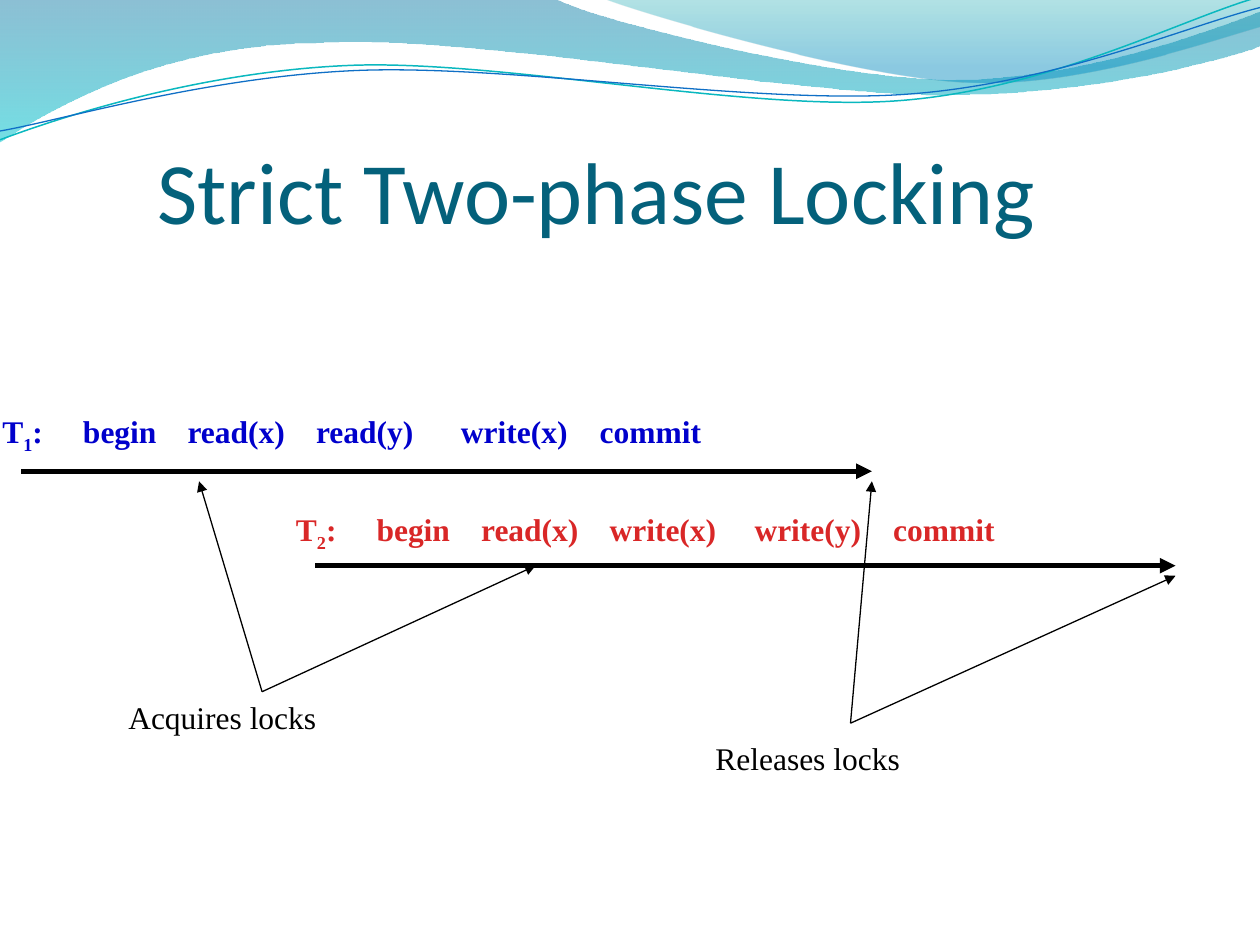
from dataclasses import dataclass

from lxml import etree
from pptx import Presentation
from pptx.dml.color import RGBColor
from pptx.enum import shapes, text
from pptx.oxml.ns import qn
from pptx.util import Inches, Pt


@dataclass(frozen=True)
class Theme:
    title_font: str = "Calibri"
    body_font: str = "Times New Roman"
    title_size: float = 50
    body_size: float = 18
    title: str = "04617B"
    first: str = "0000CC"
    second: str = "D92727"
    ink: str = "000000"
    axis_width: float = 3
    pointer_width: float = 0.75


THEME = Theme()
STEP_STOPS = (0.64, 1.47, 2.49, 3.64, 4.74)

BANDS = (
    ((0, -0.01), [
        [(4.4, -0.01)],
        [(4.76, 0.17), (6.64, 0.63), (7.58, 0.63)],
        [(8.53, 0.63), (9.58, 0.26), (10, 0.09)],
        [(10.01, 0.36)],
        [(9.83, 0.44), (8.7, 0.76), (7.46, 0.75)],
        [(6.22, 0.75), (3.82, 0.28), (2.57, 0.34)],
        [(1.29, 0.35), (0.46, 0.83), (-0.01, 1.13)],
    ], ((0, "0074A1", 45), (1, "00C6CF", 55))),
    ((4.79, -0.01), [
        [(5.09, 0.11), (6.82, 0.62), (7.69, 0.65)],
        [(8.56, 0.69), (9.61, 0.32), (10, 0.21)],
        [(10, 0)],
    ], ((0, "00A1A9", 30), (0.8, "008BBF", 45))),
)
STRANDS = (
    ((0, 1.11), [
        [(0.48, 0.93), (1.58, 0.57), (2.77, 0.52)],
        [(3.95, 0.47), (5.93, 0.89), (7.13, 0.8)],
        [(8.33, 0.71), (9.38, 0.15), (9.98, -0.02)],
    ], "0AB8BF", 0.85),
    ((0, 1.04), [
        [(0.47, 0.96), (1.64, 0.61), (2.83, 0.56)],
        [(4.03, 0.51), (5.97, 0.83), (7.17, 0.75)],
        [(8.36, 0.67), (9.41, 0.21), (10, 0.06)],
    ], "0F6FC6", 0.75),
)


def rgb(value):
    return RGBColor.from_string(value)


def add_outline(slide, box, start, segments, closed):
    left, top = box

    def place(point):
        return Inches(left + point[0]), Inches(top + point[1])

    builder = slide.shapes.build_freeform(*place(start))
    builder.add_line_segments([place(segment[-1]) for segment in segments], close=closed)
    outline = builder.convert_to_shape()
    outline.shadow.inherit = False
    edges = list(outline.element.spPr.iter(qn("a:lnTo")))
    for edge, segment in zip(edges, segments):
        if len(segment) == 3:
            edge.tag = qn("a:cubicBezTo")
            for index, control in enumerate(segment[:2]):
                x, y = place(control)
                handle = etree.Element(
                    qn("a:pt"), x=str(x - outline.left), y=str(y - outline.top))
                edge.insert(index, handle)
    return outline


def add_waves(slide, box):
    for start, segments, stops in BANDS:
        band = add_outline(slide, box, start, segments, True)
        band.line.fill.background()
        band.fill.gradient()
        band.fill.gradient_angle = 270
        for stop, (position, color, _) in zip(band.fill.gradient_stops, stops):
            stop.position = position
            stop.color.rgb = rgb(color)
        tints = band.element.spPr.iter(qn("a:srgbClr"))
        for tint, (_, _, opacity) in zip(tints, stops):
            etree.SubElement(tint, qn("a:alpha"), val=str(opacity * 1000))
    for start, segments, color, width in STRANDS:
        strand = add_outline(slide, box, start, segments, False)
        strand.fill.background()
        strand.line.color.rgb = rgb(color)
        strand.line.width = Pt(width)


def add_label(slide, box):
    label = slide.shapes.add_textbox(*map(Inches, box))
    label.text_frame.word_wrap = True
    return label.text_frame


def style_runs(paragraph, font, size, color, bold=False):
    for run in paragraph.runs:
        run.font.name = font
        run.font.size = Pt(size)
        run.font.bold = bold
        run.font.color.rgb = rgb(color)


def add_arrow(slide, start, end, width):
    arrow = slide.shapes.add_connector(
        shapes.MSO_CONNECTOR.STRAIGHT, *map(Inches, (*start, *end)))
    arrow.line.color.rgb = rgb(THEME.ink)
    arrow.line.width = Pt(width)
    properties = arrow.element.spPr
    etree.SubElement(properties.find(qn("a:ln")), qn("a:tailEnd"), type="triangle")
    etree.SubElement(properties, qn("a:effectLst"))


def add_title(slide, box, wording):
    frame = add_label(slide, box)
    frame.margin_left = frame.margin_right = frame.margin_bottom = 0
    frame.vertical_anchor = text.MSO_ANCHOR.BOTTOM
    frame.text = wording
    style_runs(frame.paragraphs[0], THEME.title_font, THEME.title_size, THEME.title)


def add_timeline(slide, box, number, steps, color, axis_drop, axis_length):
    left, top = box[:2]
    schedule = add_label(slide, box).paragraphs[0]
    for part in ("T", number, "\t".join((":", *steps))):
        schedule.add_run().text = part
    style_runs(schedule, THEME.body_font, THEME.body_size, color, bold=True)
    schedule.runs[1].font._element.set("baseline", "-25000")
    tabs = etree.SubElement(schedule._p.get_or_add_pPr(), qn("a:tabLst"))
    for stop in STEP_STOPS:
        etree.SubElement(tabs, qn("a:tab"), pos=str(Inches(stop)), algn="l")
    axis_left, axis_top = left + 0.25, top + axis_drop
    add_arrow(slide, (axis_left, axis_top), (axis_left + axis_length, axis_top),
              THEME.axis_width)


def add_callout(slide, box, wording, apex, targets):
    left, top = box[:2]
    frame = add_label(slide, box)
    frame.text = wording
    style_runs(frame.paragraphs[0], THEME.body_font, THEME.body_size, THEME.ink)
    for target in targets:
        add_arrow(slide, (left + apex[0], top + apex[1]), target, THEME.pointer_width)


def main():
    deck = Presentation()
    deck.slide_width, deck.slide_height = Inches(10), Inches(7.5)
    slide = deck.slides.add_slide(deck.slide_layouts[6])
    add_waves(slide, (0, 0))
    add_title(slide, (1.25, 0.67, 8.83, 1.25), "Strict Two-phase Locking")
    add_timeline(slide, (-0.08, 3.22, 7.75, 0.5), "1",
                 ("begin", "read(x)", "read(y)", "write(x)", "commit"),
                 THEME.first, 0.52, 6.75)
    add_timeline(slide, (2.25, 4, 7.75, 0.5), "2",
                 ("begin", "read(x)", "write(x)", "write(y)", "commit"),
                 THEME.second, 0.49, 6.83)
    add_callout(slide, (0.92, 5.49, 2.75, 0.5), "Acquires locks", (1.16, 0),
                ((1.58, 3.82), (4.25, 4.49)))
    add_callout(slide, (5.58, 5.82, 2.75, 0.5), "Releases locks", (1.17, -0.08),
                ((6.92, 3.82), (9.33, 4.57)))
    deck.save("out.pptx")


if __name__ == "__main__":
    main()
